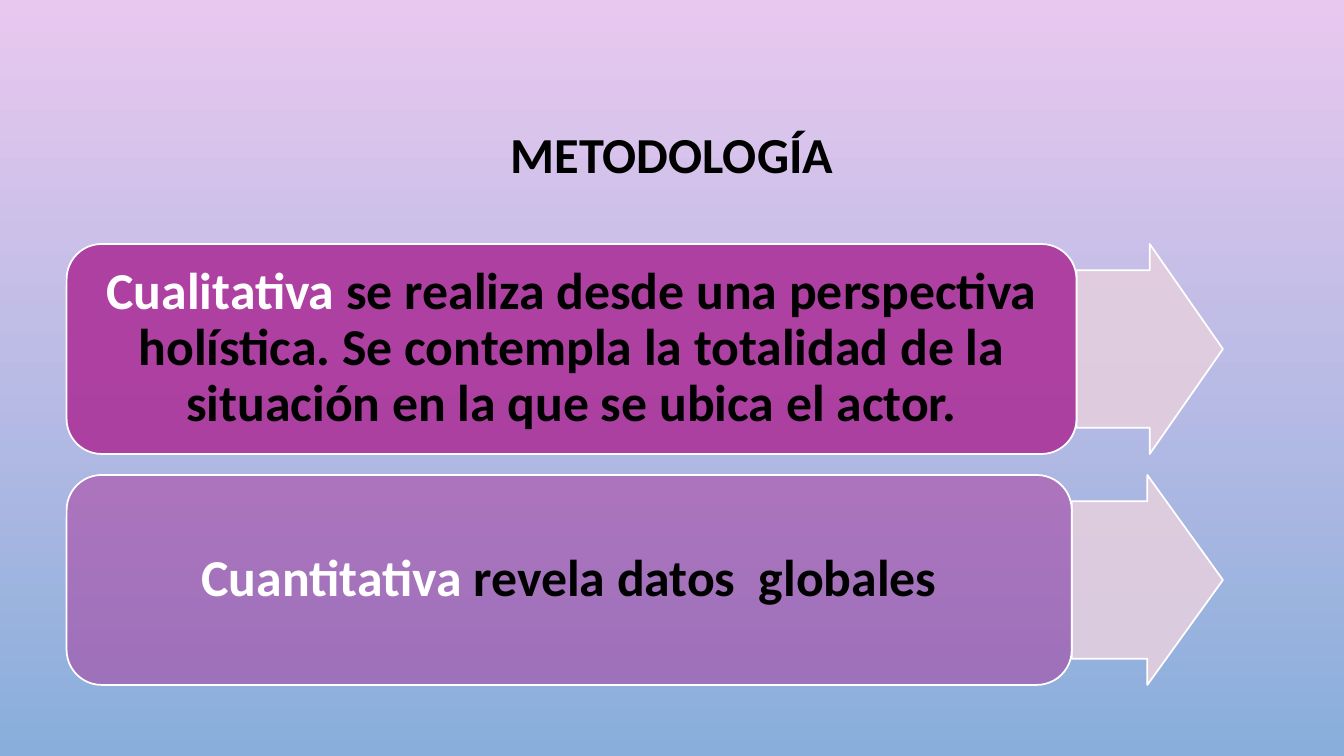
from lxml import etree
from pptx import Presentation
from pptx.dml.color import RGBColor
from pptx.enum.shapes import MSO_SHAPE as Shape
from pptx.enum.text import MSO_ANCHOR as Anchor, PP_ALIGN as Align
from pptx.oxml.ns import qn
from pptx.util import Cm, Pt

BLACK = RGBColor(0, 0, 0)
WHITE = RGBColor(255, 255, 255)
MAGENTA = RGBColor(0xAC, 0x33, 0x9A)
PALE_PINK = RGBColor(0xE3, 0xCE, 0xDE)
SKY_PINK = RGBColor(0xE9, 0xC8, 0xEF)
SKY_BLUE = RGBColor(0x89, 0xAE, 0xDB)


class MethodSlide:
    font_name = "Calibri"
    line_spacing = 0.9

    def __init__(self, deck):
        self.slide = deck.slides.add_slide(deck.slide_layouts[6])

    def background(self, top_color, bottom_color):
        fill = self.slide.background.fill
        fill.gradient()
        fill.gradient_angle = 270
        for stop, position, color in zip(fill.gradient_stops, (0, 1), (top_color, bottom_color)):
            stop.position = position
            stop.color.rgb = color

    def put_text(self, frame, size, *parts):
        frame.word_wrap = True
        frame.vertical_anchor = Anchor.MIDDLE
        paragraph = frame.paragraphs[0]
        paragraph.alignment = Align.CENTER
        paragraph.line_spacing = self.line_spacing
        for text, color in parts:
            run = paragraph.add_run()
            run.text = text
            run.font.name = self.font_name
            run.font.size = Pt(size)
            run.font.bold = True
            run.font.color.rgb = color

    def title(self, text, left, top, width, height):
        box = self.slide.shapes.add_textbox(Cm(left), Cm(top), Cm(width), Cm(height))
        self.put_text(box.text_frame, 36, (text, BLACK))

    def block(self, kind, left, top, width, height, color, opacity):
        shape = self.slide.shapes.add_shape(kind, Cm(left), Cm(top), Cm(width), Cm(height))
        shape.shadow.inherit = False
        shape.fill.solid()
        shape.fill.fore_color.rgb = color
        srgb = shape._element.spPr.find(qn("a:solidFill")).find(qn("a:srgbClr"))
        etree.SubElement(srgb, qn("a:alpha")).set("val", str(opacity * 1000))
        shape.line.color.rgb = WHITE
        shape.line.width = Pt(1.25)
        return shape

    def arrow(self, left, top, width, height):
        arrow = self.block(Shape.RIGHT_ARROW, left, top, width, height, PALE_PINK, 90)
        arrow.adjustments[0] = 0.75
        arrow.adjustments[1] = 0.5

    def card(self, term, description, left, top, width, height, opacity):
        card = self.block(Shape.ROUNDED_RECTANGLE, left, top, width, height, MAGENTA, opacity)
        frame = card.text_frame
        frame.margin_left = frame.margin_right = Cm(0.13)
        frame.margin_top = frame.margin_bottom = 0
        self.put_text(frame, 37, (term, WHITE), (description, BLACK))


def main():
    deck = Presentation()
    deck.slide_width, deck.slide_height = Cm(33.87), Cm(19.05)
    page = MethodSlide(deck)
    page.background(SKY_PINK, SKY_BLUE)
    page.title("METODOLOGÍA", 2.54, 1.73, 28.78, 4.45)

    methods = [
        ("Cualitativa", " se realiza desde una perspectiva holística. Se contempla "
         "la totalidad de la situación en la que se ubica el actor.", 25.45, 90),
        ("Cuantitativa", " revela datos  globales", 25.33, 50),
    ]
    left, right, first_top, height, pitch = 1.68, 30.82, 6.15, 5.29, 5.82
    for row, (term, description, width, opacity) in enumerate(methods):
        top = first_top + row * pitch
        page.arrow(left + width, top, right - left - width, height)
        page.card(term, description, left, top, width, height, opacity)
    deck.save("out.pptx")


if __name__ == "__main__":
    main()
